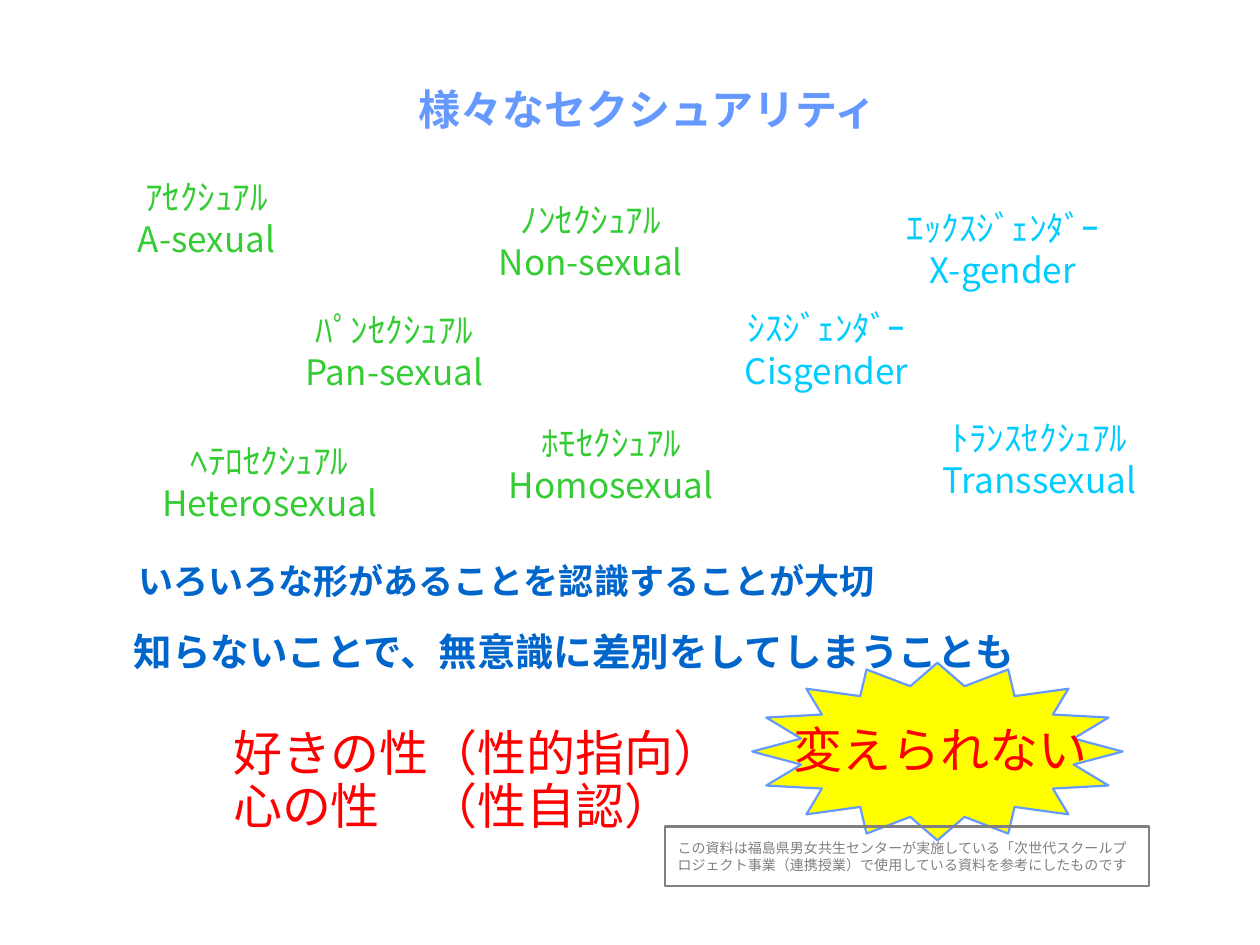
from dataclasses import dataclass

from pptx import Presentation
from pptx.dml.color import RGBColor
from pptx.enum.shapes import MSO_SHAPE
from pptx.enum.text import MSO_ANCHOR, PP_ALIGN
from pptx.oxml.ns import qn
from pptx.util import Inches, Pt

FONT = "Noto Sans CJK JP"
COLS, ROWS = 100, 75
COLORS = {
    "title": "6699FF",
    "message": "0066CC",
    "orientation": "33CC33",
    "gender": "00CCFF",
    "emphasis": "FF0000",
    "burst": "FFFF00",
    "note": "808080",
}


@dataclass(frozen=True)
class Box:
    """A place on the slide grid, in columns and rows."""
    col: float
    row: float
    cols: float
    rows: float


@dataclass(frozen=True)
class Label:
    box: Box
    lines: tuple[str, ...]
    size: int
    color: str
    bold: bool = False
    align: PP_ALIGN = PP_ALIGN.CENTER
    spacing: float = 1.0


@dataclass(frozen=True)
class Term:
    """A kana reading above its English term, centred on a column."""
    center: float
    row: float
    kana: str
    english: str
    color: str


TERMS = [
    Term(79.6, 15.9, "ｴｯｸｽｼﾞｪﾝﾀﾞｰ", "X-gender", "gender"),
    Term(16.4, 13.5, "ｱｾｸｼｭｱﾙ", "A-sexual", "orientation"),
    Term(46.9, 15.3, "ﾉﾝｾｸｼｭｱﾙ", "Non-sexual", "orientation"),
    Term(31.3, 24.0, "ﾊﾟﾝｾｸｼｭｱﾙ", "Pan-sexual", "orientation"),
    Term(82.5, 32.6, "ﾄﾗﾝｽｾｸｼｭｱﾙ", "Transsexual", "gender"),
    Term(48.5, 33.0, "ﾎﾓｾｸｼｭｱﾙ", "Homosexual", "orientation"),
    Term(21.4, 34.4, "ﾍﾃﾛｾｸｼｭｱﾙ", "Heterosexual", "orientation"),
    Term(65.6, 23.9, "ｼｽｼﾞｪﾝﾀﾞｰ", "Cisgender", "gender"),
]
TERM_COLS, TERM_ROWS = 25.5, 7.6

LABELS = [
    Label(Box(31.3, 5.7, 40.2, 5.8), ("様々なセクシュアリティ",), 24, "title", bold=True),
    Label(Box(9.1, 43.4, 62.2, 5.4), ("いろいろな形があることを認識することが大切",),
          20, "message", bold=True),
    Label(Box(9.1, 49.5, 72.9, 4.4), ("知らないことで、無意識に差別をしてしまうことも",),
          22, "message", bold=True),
    Label(Box(18.5, 57.5, 39.8, 9.2), ("好きの性（性的指向）", "心の性　（性自認）"),
          28, "emphasis", align=PP_ALIGN.LEFT, spacing=0.9),
]
BURST = Box(59.7, 52.6, 29.4, 14.1)
BURST_LABEL = Label(Box(63, 54.8, 28.2, 9.2), ("変えられない",), 28, "emphasis",
                    align=PP_ALIGN.LEFT)
NOTE = Label(
    Box(52.8, 65.6, 38.4, 4.7),
    ("この資料は福島県男女共生センターが実施している「次世代スクールプロジェクト事業"
     "（連携授業）で使用している資料を参考にしたものです",),
    8, "note", align=PP_ALIGN.LEFT)


def rgb(name: str) -> RGBColor:
    return RGBColor.from_string(COLORS[name])


def place(prs, box: Box) -> tuple[int, int, int, int]:
    """Turn grid units into left, top, width and height."""
    col, row = prs.slide_width / COLS, prs.slide_height / ROWS
    return (round(box.col * col), round(box.row * row),
            round(box.cols * col), round(box.rows * row))


def write(tf, label: Label) -> None:
    tf.word_wrap = True
    tf.vertical_anchor = MSO_ANCHOR.MIDDLE
    for i, line in enumerate(label.lines):
        p = tf.paragraphs[0] if i == 0 else tf.add_paragraph()
        p.text = line
        p.alignment = label.align
        p.line_spacing = label.spacing
        font = p.font
        font.name, font.size, font.bold = FONT, Pt(label.size), label.bold
        font.color.rgb = rgb(label.color)
        east_asian = p._p.pPr.find(qn("a:defRPr")).makeelement(qn("a:ea"), {"typeface": FONT})
        p._p.pPr.find(qn("a:defRPr")).find(qn("a:latin")).addnext(east_asian)


def add_label(prs, s, label: Label) -> None:
    tf = s.shapes.add_textbox(*place(prs, label.box)).text_frame
    tf.margin_left = tf.margin_right = tf.margin_top = tf.margin_bottom = 0
    write(tf, label)


def add_outlined(prs, s, kind: MSO_SHAPE, box: Box, line: str, fill: str | None = None):
    sp = s.shapes.add_shape(kind, *place(prs, box))
    sp.shadow.inherit = False
    if fill:
        sp.fill.solid()
        sp.fill.fore_color.rgb = rgb(fill)
    else:
        sp.fill.background()
    sp.line.color.rgb = rgb(line)
    sp.line.width = Pt(1.25)
    return sp


def term_label(term: Term) -> Label:
    box = Box(term.center - TERM_COLS / 2, term.row, TERM_COLS, TERM_ROWS)
    return Label(box, (term.kana, term.english), 20, term.color)


def main() -> None:
    prs = Presentation()
    prs.slide_width, prs.slide_height = Inches(10), Inches(7.5)
    s = prs.slides.add_slide(prs.slide_layouts[6])
    for label in LABELS + [term_label(term) for term in TERMS]:
        add_label(prs, s, label)
    add_outlined(prs, s, MSO_SHAPE.STAR_16_POINT, BURST, "title", "burst")
    add_label(prs, s, BURST_LABEL)
    note = add_outlined(prs, s, MSO_SHAPE.RECTANGLE, NOTE.box, "note")
    write(note.text_frame, NOTE)
    prs.save("out.pptx")


if __name__ == "__main__":
    main()
